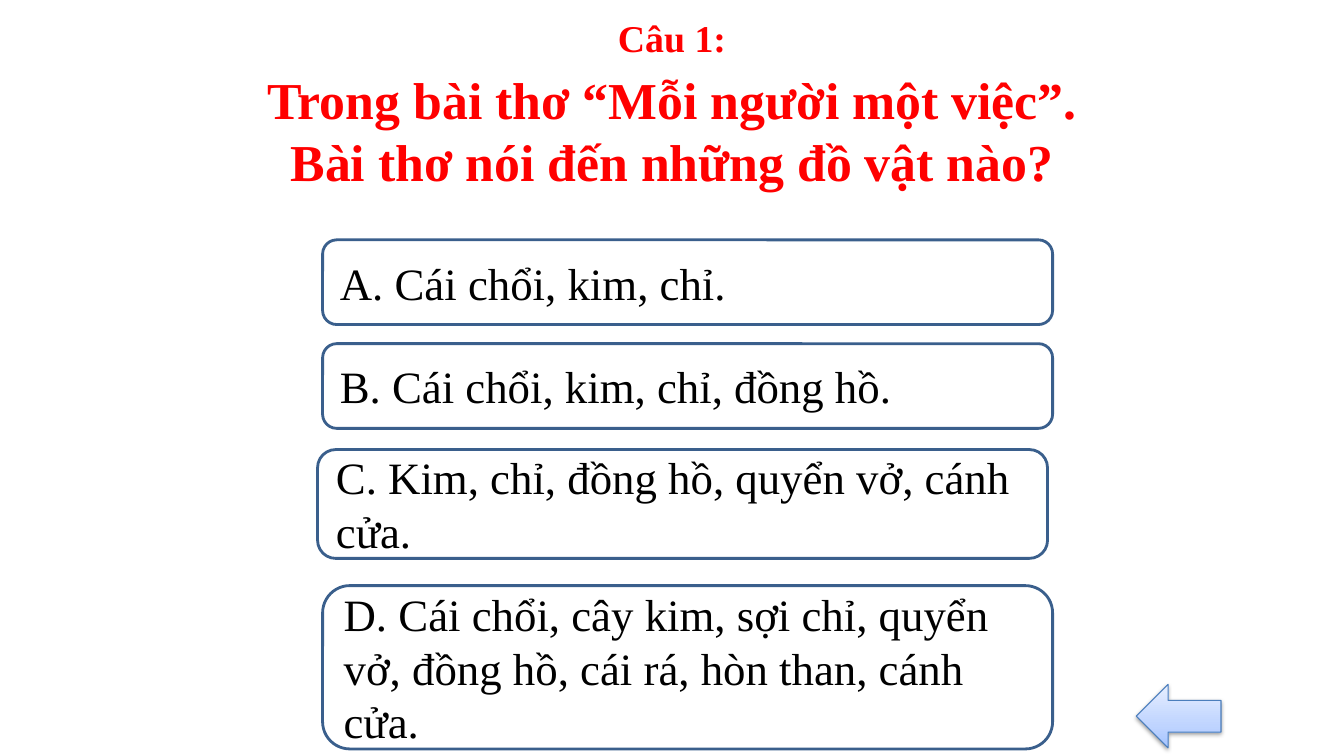
from dataclasses import dataclass

from lxml.etree import SubElement
from pptx import Presentation
from pptx.dml.color import RGBColor as RGB
from pptx.enum.shapes import MSO_SHAPE as SHAPE
from pptx.enum.text import MSO_ANCHOR as ANCHOR, MSO_AUTO_SIZE as FIT, PP_ALIGN as ALIGN
from pptx.oxml.ns import qn
from pptx.util import Emu, Pt

PX = 9144


@dataclass(frozen=True)
class Theme:
    font: str = "Times New Roman"
    heading: str = "FF0000"
    ink: str = "000000"
    box: str = "FFFFFF"
    box_line: str = "3A5F8C"
    arrow_line: str = "4B7EBC"
    arrow_stops: tuple = ((0, "A4C4FF"), (35, "BFD4FF"), (100, "E6EEFF"))
    label_size: int = 27
    question_size: int = 37
    answer_size: int = 32


def px(*values):
    return [Emu(v * PX) for v in values]


def add_color(parent, color, alpha=100):
    clr = SubElement(parent, qn("a:srgbClr"), val=color)
    if alpha < 100:
        SubElement(clr, qn("a:alpha"), val=str(alpha * 1000))


class QuizSlide:
    def __init__(self, prs, theme):
        self.theme = theme
        self.s = prs.slides.add_slide(prs.slide_layouts[5])

    def set_text(self, sp, lines, size, color, align, anchor, bold=False):
        tf = sp.text_frame
        tf.word_wrap = True
        tf.auto_size = FIT.NONE
        tf.vertical_anchor = anchor
        tf.margin_left, tf.margin_top, tf.margin_right, tf.margin_bottom = px(13, 7, 13, 7)
        for i, line in enumerate(lines):
            p = tf.add_paragraph() if i else tf.paragraphs[0]
            p.add_run().text = line
            p.alignment = align
            p.font.name = self.theme.font
            p.font.size = Pt(size)
            p.font.bold = bold
            p.font.color.rgb = RGB.from_string(color)

    def label(self, text, *box):
        sp = self.s.shapes.add_textbox(*px(*box))
        t = self.theme
        self.set_text(sp, [text], t.label_size, t.heading, ALIGN.CENTER, ANCHOR.TOP, True)

    def question(self, lines, *box):
        sp = self.s.shapes.title
        sp.left, sp.top, sp.width, sp.height = px(*box)
        t = self.theme
        self.set_text(sp, lines, t.question_size, t.heading, ALIGN.CENTER, ANCHOR.TOP, True)

    def shape(self, kind, line, width, *box):
        sp = self.s.shapes.add_shape(kind, *px(*box))
        sp.shadow.inherit = False
        sp.line.color.rgb = RGB.from_string(line)
        sp.line.width = Pt(width)
        return sp

    def answer(self, text, *box):
        t = self.theme
        sp = self.shape(SHAPE.ROUNDED_RECTANGLE, t.box_line, 2, *box)
        sp.fill.solid()
        sp.fill.fore_color.rgb = RGB.from_string(t.box)
        clr = sp._element.spPr.find(qn("a:solidFill")).find(qn("a:srgbClr"))
        SubElement(clr, qn("a:alpha"), val="50000")
        self.set_text(sp, [text], t.answer_size, t.ink, ALIGN.LEFT, ANCHOR.MIDDLE)

    def back_arrow(self, *box):
        sp = self.shape(SHAPE.LEFT_ARROW, self.theme.arrow_line, 0.75, *box)
        sp.fill.gradient()
        sp.fill.gradient_angle = 90
        spPr = sp._element.spPr
        stops = spPr.find(qn("a:gradFill")).find(qn("a:gsLst"))
        for stop in list(stops):
            stops.remove(stop)
        for pos, color in self.theme.arrow_stops:
            add_color(SubElement(stops, qn("a:gs"), pos=str(pos * 1000)), color)
        shadow = SubElement(spPr.find(qn("a:effectLst")), qn("a:outerShdw"),
                            blurRad=str(Pt(3.1)), dist=str(Pt(1.6)),
                            dir="5400000", rotWithShape="0")
        add_color(shadow, self.theme.ink, 38)


def main():
    prs = Presentation()
    prs.slide_width, prs.slide_height = px(1333, 750)
    quiz = QuizSlide(prs, Theme())
    quiz.label("Câu 1:", 588, 8, 157, 58)
    quiz.back_arrow(1127, 679, 84, 63)
    quiz.question(["Trong bài thơ “Mỗi người một việc”.",
                   "Bài thơ nói đến những đồ vật nào?"], 122, 60, 1089, 139)
    answers = (
        ("A. Cái chổi, kim, chỉ.", 320, 238, 84),
        ("B. Cái chổi, kim, chỉ, đồng hồ.", 320, 341, 84),
        ("C. Kim, chỉ, đồng hồ, quyển vở, cánh cửa.", 315, 446, 108),
        ("D. Cái chổi, cây kim, sợi chỉ, quyển vở, đồng hồ, cái rá, hòn than, cánh cửa.",
         320, 581, 162),
    )
    for text, left, top, height in answers:
        quiz.answer(text, left, top, 724, height)
    prs.save("out.pptx")


if __name__ == "__main__":
    main()
